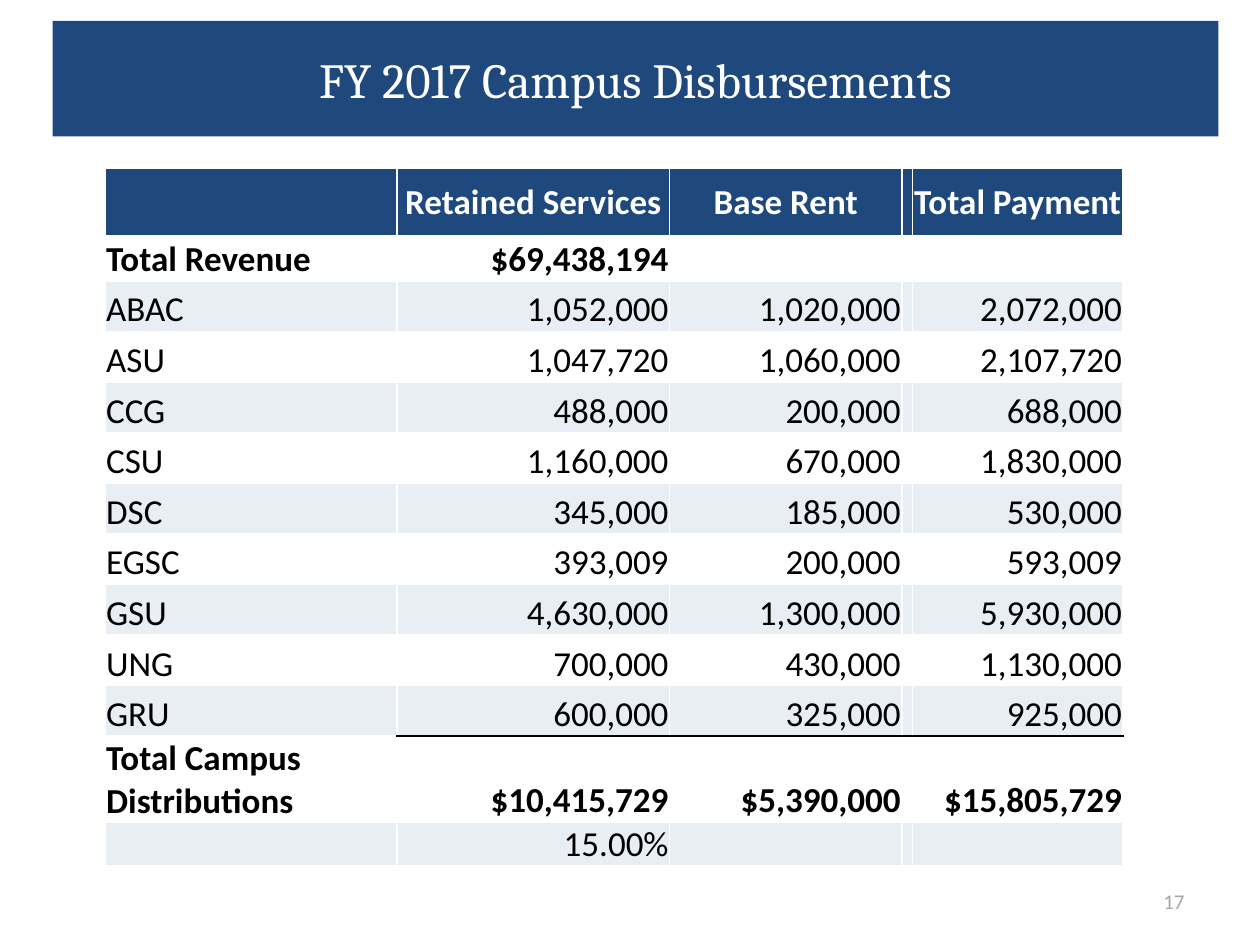
"""Build the FY 2017 campus disbursements slide."""
from lxml import etree
from pptx import Presentation
from pptx.dml.color import RGBColor
from pptx.enum.text import MSO_ANCHOR, PP_ALIGN
from pptx.oxml import parse_xml
from pptx.util import Cm, Pt

LEFT, CENTER, RIGHT = PP_ALIGN.LEFT, PP_ALIGN.CENTER, PP_ALIGN.RIGHT
MIDDLE, BOTTOM = MSO_ANCHOR.MIDDLE, MSO_ANCHOR.BOTTOM
NS = "http://schemas.openxmlformats.org/drawingml/2006/main"
NAVY, BAND, WHITE, BLACK, GREY = "1F497D", "E9EDF4", "FFFFFF", "000000", "A6A6A6"


def rgb(color):
    return RGBColor.from_string(color)


def write(tf, text, size=20, font="Calibri", color=BLACK, bold=False, align=LEFT):
    p = tf.paragraphs[0]
    p.alignment = align
    r = p.add_run()
    r.text = text
    r.font.size = Pt(size)
    r.font.name = font
    r.font.bold = bold
    r.font.color.rgb = rgb(color)


HEADER = ["", "Retained Services", "Base Rent", "", "Total Payment"]
CAMPUSES = [
    ("ABAC", "1,052,000", "1,020,000", "2,072,000"),
    ("ASU", "1,047,720", "1,060,000", "2,107,720"),
    ("CCG", "488,000", "200,000", "688,000"),
    ("CSU", "1,160,000", "670,000", "1,830,000"),
    ("DSC", "345,000", "185,000", "530,000"),
    ("EGSC", "393,009", "200,000", "593,009"),
    ("GSU", "4,630,000", "1,300,000", "5,930,000"),
    ("UNG", "700,000", "430,000", "1,130,000"),
    ("GRU", "600,000", "325,000", "925,000"),
]
rows = [HEADER, ["Total Revenue", "$69,438,194", "", "", ""]]
rows += [[name, services, rent, "", total] for name, services, rent, total in CAMPUSES]
rows += [
    ["Total Campus Distributions", "$10,415,729", "$5,390,000", "", "$15,805,729"],
    ["", "15.00%", "", "", ""],
]
LAST = len(rows) - 1
TOTAL = LAST - 1
widths = [5.88, 5.5, 4.68, 0.21, 4.25]
heights = [1.36, 0.91] + [1.02] * len(CAMPUSES) + [1.74, 0.88]

prs = Presentation()
prs.slide_width, prs.slide_height = Cm(25.4), Cm(19.05)
s = prs.slides.add_slide(prs.slide_layouts[5])

title = s.shapes.title
title.left, title.top, title.width, title.height = Cm(1.06), Cm(0.42), Cm(23.5), Cm(2.33)
title.fill.solid()
title.fill.fore_color.rgb = rgb(NAVY)
title.text_frame.vertical_anchor = MIDDLE
write(title.text_frame, "FY 2017 Campus Disbursements", size=28, font="Cambria",
      color=WHITE, align=CENTER)

number = s.shapes.add_textbox(Cm(18.2), Cm(17.66), Cm(5.93), Cm(1.01))
number.text_frame.word_wrap = True
number.text_frame.vertical_anchor = MIDDLE
write(number.text_frame, "17", size=12, color=GREY, align=RIGHT)

table = s.shapes.add_table(len(rows), len(widths), Cm(2.12), Cm(3.39),
                           Cm(sum(widths)), Cm(sum(heights))).table
table.first_row = table.horz_banding = False
for column, width in zip(table.columns, widths):
    column.width = Cm(width)
for row, height in zip(table.rows, heights):
    row.height = Cm(height)

for i, values in enumerate(rows):
    for j, text in enumerate(values):
        cell = table.cell(i, j)
        cell.margin_left = cell.margin_right = cell.margin_top = Cm(0.02)
        cell.margin_bottom = 0
        cell.vertical_anchor = MIDDLE if i in (0, LAST) else BOTTOM
        if i % 2 and i:
            cell.fill.background()
        else:
            cell.fill.solid()
            cell.fill.fore_color.rgb = rgb(BAND if i else NAVY)
        if text:
            write(cell.text_frame, text, color=BLACK if i else WHITE,
                  bold=i in (0, 1, TOTAL),
                  align=CENTER if i == 0 else RIGHT if j else LEFT)
        sides = {side: WHITE for side in ("lnL", "lnR", "lnT", "lnB")}
        if j and i == TOTAL - 1:
            sides["lnB"] = BLACK
        if j and i == TOTAL:
            sides["lnT"] = BLACK
        tcPr = cell._tc.get_or_add_tcPr()
        for k, (side, color) in enumerate(sides.items()):
            line = etree.Element(f"{{{NS}}}{side}", w=str(Pt(1)))
            fill = etree.SubElement(line, f"{{{NS}}}solidFill")
            etree.SubElement(fill, f"{{{NS}}}srgbClr", val=color)
            tcPr.insert(k, parse_xml(etree.tostring(line)))

prs.save("out.pptx")
